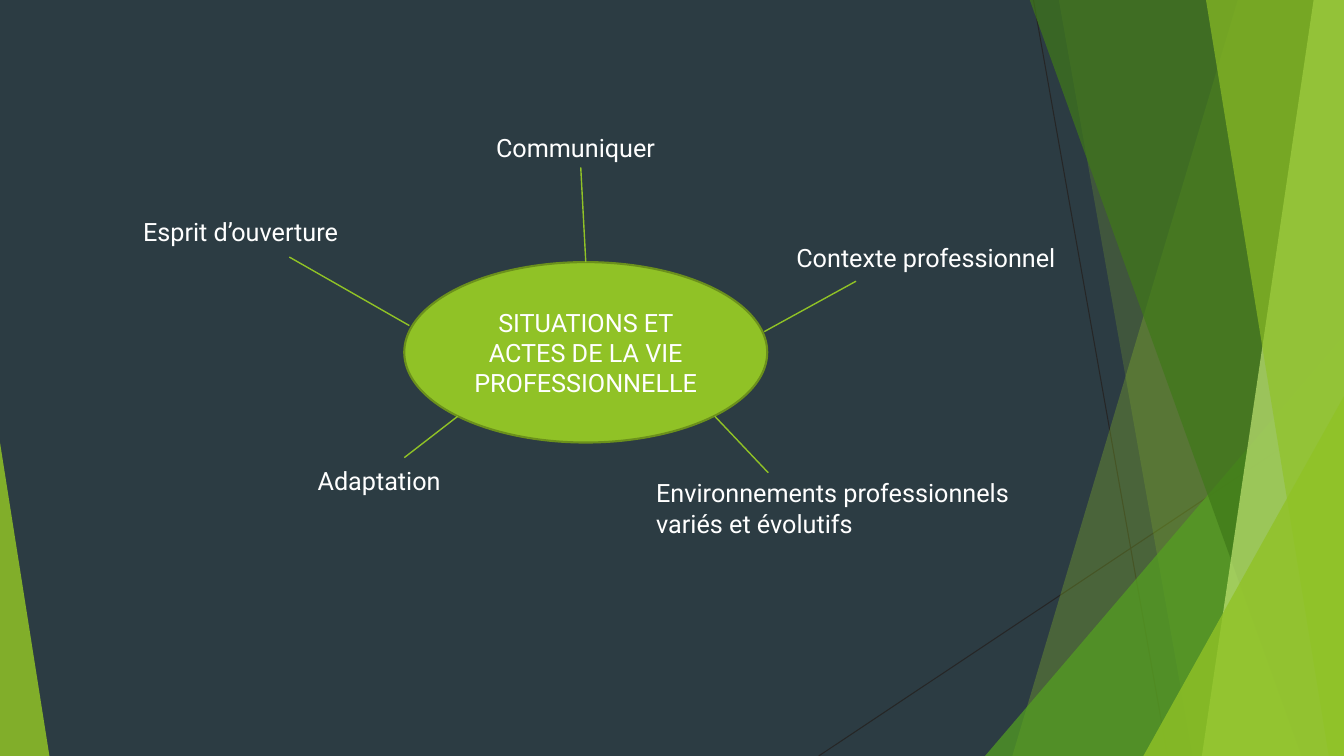
from dataclasses import dataclass

from lxml import etree
from pptx import Presentation
from pptx.dml.color import RGBColor
from pptx.enum.shapes import MSO_CONNECTOR, MSO_SHAPE
from pptx.enum.text import MSO_ANCHOR, MSO_AUTO_SIZE, PP_ALIGN
from pptx.oxml.ns import qn
from pptx.util import Inches, Pt


@dataclass(frozen=True)
class Theme:
    background: str = "2C3C43"
    lime: str = "90C226"
    pale: str = "C0E474"
    green: str = "54A021"
    forest: str = "3F7819"
    outline: str = "6B901C"
    hairline: str = "262626"
    text: str = "FFFFFF"
    font: str = "Roboto"
    size: int = 18


theme = Theme()
WIDTH, HEIGHT, TOP = 13.33, 7.5, -0.01

prs = Presentation()
prs.slide_width, prs.slide_height = Inches(WIDTH), Inches(HEIGHT)
slide = prs.slides.add_slide(prs.slide_layouts[6])
slide.background.fill.solid()
slide.background.fill.fore_color.rgb = RGBColor.from_string(theme.background)


def add_line(start, end, color, weight):
    line = slide.shapes.add_connector(
        MSO_CONNECTOR.STRAIGHT, *[Inches(v) for v in (*start, *end)])
    line.line.color.rgb = RGBColor.from_string(color)
    line.line.width = Pt(weight)
    etree.SubElement(line._element.spPr, qn("a:effectLst"))
    return line


def paint_facet(facet, color, opacity):
    """Fill a borderless facet with a colour at an opacity in percent."""
    facet.shadow.inherit = False
    facet.line.fill.background()
    facet.fill.solid()
    facet.fill.fore_color.rgb = RGBColor.from_string(color)
    srgb = facet._element.spPr.find(qn("a:solidFill")).find(qn("a:srgbClr"))
    etree.SubElement(srgb, qn("a:alpha")).set("val", str(opacity * 1000))


# Faceted decoration at the slide edges, back to front
add_line((10.25, 0), (11.58, HEIGHT), theme.hairline, 0.75)
add_line((WIDTH, 4.03), (8.12, HEIGHT), theme.hairline, 0.75)

# Bands reach the right edge: (top left x, bottom left x, colour, opacity)
# Corners stand on the bottom edge: (left, top, width, apex, colour, opacity)
facets = [
    (12.28, 10.04, theme.lime, 30),
    (10.5, 11.83, theme.lime, 20),
    (9.77, 3.33, 3.56, 1, theme.green, 72),
    (10.21, 12.91, theme.forest, 70),
    (13.03, 11.92, theme.pale, 70),
    (11.96, 13.18, theme.lime, 65),
    (11.34, 3.93, 1.99, 1, theme.lime, 80),
    (0, 4.39, 0.49, 0, theme.lime, 85),
]
for *geometry, color, opacity in facets:
    if len(geometry) == 2:
        top_x, bottom_x = geometry
        outline = slide.shapes.build_freeform(Inches(top_x), Inches(TOP))
        outline.add_line_segments(
            [(Inches(x), Inches(y)) for x, y in
             ((WIDTH, TOP), (WIDTH, HEIGHT), (bottom_x, HEIGHT))])
        facet = outline.convert_to_shape()
    else:
        left, top, width, apex = geometry
        facet = slide.shapes.add_shape(
            MSO_SHAPE.ISOSCELES_TRIANGLE, Inches(left), Inches(top),
            Inches(width), Inches(HEIGHT - top))
        facet.adjustments[0] = apex
    paint_facet(facet, color, opacity)

# Central theme of the mind map
center = slide.shapes.add_shape(
    MSO_SHAPE.OVAL, Inches(4.01), Inches(2.6), Inches(3.6), Inches(1.79))
center.shadow.inherit = False
center.fill.solid()
center.fill.fore_color.rgb = RGBColor.from_string(theme.lime)
center.line.color.rgb = RGBColor.from_string(theme.outline)
center.line.width = Pt(1.5)
center.text_frame.vertical_anchor = MSO_ANCHOR.MIDDLE
center.text_frame.paragraphs[0].alignment = PP_ALIGN.CENTER
labelled = [(center, "SITUATIONS ET ACTES DE LA VIE PROFESSIONNELLE")]

# Branches: label, box (left, top, width, height), left inset, spoke ends
branches = [
    ("Esprit d’ouverture", (0.33, 2.1, 3.9, 0.4), 1.09,
     (4.06, 3.23), (2.87, 2.55)),
    ("Communiquer", (4.64, 1.26, 2.35, 0.4), 0.28,
     (5.82, 2.6), (5.76, 1.66)),
    ("Contexte professionnel", (7.8, 2.35, 3.12, 0.4), 0.1,
     (7.58, 3.29), (8.49, 2.79)),
    ("Adaptation", (2.69, 4.57, 1.95, 0.4), 0.46,
     (4.54, 4.13), (4.01, 4.54)),
    ("Environnements professionnels variés et évolutifs",
     (6.41, 4.69, 4.15, 0.71), 0.1, (7.09, 4.13), (7.62, 4.69)),
]
for label, box, inset, rim, tip in branches:
    spoke = add_line(rim, tip, theme.lime, 1)
    if label == "Communiquer":
        spoke.begin_connect(center, 0)
    branch = slide.shapes.add_textbox(*[Inches(v) for v in box])
    branch.text_frame.margin_left = Inches(inset)
    branch.text_frame.auto_size = MSO_AUTO_SIZE.SHAPE_TO_FIT_TEXT
    labelled.append((branch, label))

for holder, label in labelled:
    holder.text_frame.word_wrap = True
    run = holder.text_frame.paragraphs[0].add_run()
    run.text = label
    run.font.name = theme.font
    run.font.size = Pt(theme.size)
    run.font.color.rgb = RGBColor.from_string(theme.text)

prs.save("out.pptx")
